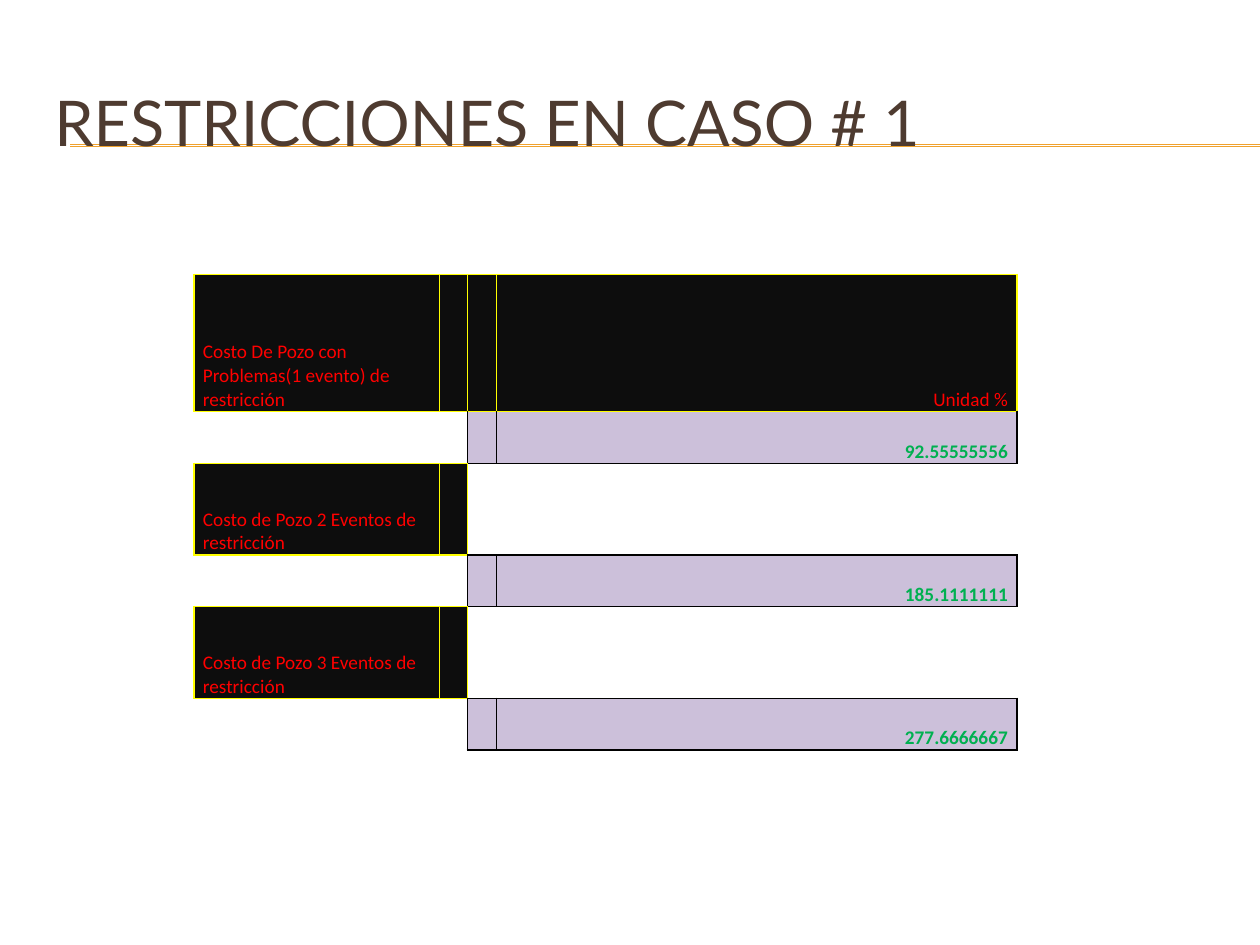
from dataclasses import dataclass

from lxml import etree
from pptx import Presentation
from pptx.dml.color import RGBColor
from pptx.enum.shapes import MSO_CONNECTOR
from pptx.enum.text import MSO_ANCHOR, MSO_AUTO_SIZE, PP_ALIGN
from pptx.oxml.ns import qn
from pptx.util import Cm, Pt

STRAIGHT = MSO_CONNECTOR.STRAIGHT
MIDDLE, BOTTOM = MSO_ANCHOR.MIDDLE, MSO_ANCHOR.BOTTOM
LEFT, RIGHT = PP_ALIGN.LEFT, PP_ALIGN.RIGHT
NO_AUTOFIT = MSO_AUTO_SIZE.NONE

COLORS = {
    "title": "4E3B30",
    "rule": "F0A22E",
    "label_fill": "0D0D0D",
    "label_text": "FF0000",
    "label_border": "FFFF00",
    "value_fill": "CCC0DA",
    "value_text": "00B050",
    "value_border": "000000",
}
COLUMN_WIDTHS = (4.95, 0.56, 0.59, 10.49)
HEADER_HEIGHT, LABEL_HEIGHT, VALUE_HEIGHT = 2.77, 1.85, 1.04
# Neighbour offsets (row, column) in the order the cell properties require
SIDES = {"a:lnL": (0, -1), "a:lnR": (0, 1), "a:lnT": (-1, 0), "a:lnB": (1, 0)}


@dataclass(frozen=True)
class CostRow:
    height: float
    kinds: tuple[str, ...]
    first: str = ""
    last: str = ""


def label_row(label: str) -> CostRow:
    return CostRow(LABEL_HEIGHT, ("label", "label", "", ""), first=label)


def value_row(value: str) -> CostRow:
    return CostRow(VALUE_HEIGHT, ("", "", "value", "value"), last=value)


COST_ROWS = (
    CostRow(HEADER_HEIGHT, ("label",) * 4,
            "Costo De Pozo con Problemas(1 evento) de restricción", "Unidad %"),
    value_row("92.55555556"),
    label_row("Costo de Pozo 2 Eventos de restricción"),
    value_row("185.1111111"),
    label_row("Costo de Pozo 3 Eventos de restricción"),
    value_row("277.6666667"),
)


def rgb(name: str) -> RGBColor:
    return RGBColor.from_string(COLORS[name])


def kind_at(row: int, column: int) -> str:
    inside = 0 <= row < len(COST_ROWS) and 0 <= column < len(COLUMN_WIDTHS)
    return COST_ROWS[row].kinds[column] if inside else ""


def add_borders(cell, row: int, column: int) -> None:
    """Colour each edge by the cells that share it; labels win over values."""
    properties = cell._tc.get_or_add_tcPr()
    for tag, (down, across) in SIDES.items():
        sharing = {kind_at(row, column), kind_at(row + down, column + across)}
        edge = etree.SubElement(properties, qn(tag), w=str(Pt(1)))
        owner = next((kind for kind in ("label", "value") if kind in sharing), None)
        if owner:
            fill = etree.SubElement(edge, qn("a:solidFill"))
            etree.SubElement(fill, qn("a:srgbClr"), val=COLORS[f"{owner}_border"])
        else:
            etree.SubElement(edge, qn("a:noFill"))


def format_cell(cell, row: int, column: int) -> None:
    kind = kind_at(row, column)
    add_borders(cell, row, column)
    if kind:
        cell.fill.solid()
        cell.fill.fore_color.rgb = rgb(f"{kind}_fill")
    else:
        cell.fill.background()
    cell.vertical_anchor = BOTTOM
    cell.margin_left = cell.margin_right = Cm(0.18)
    cell.margin_top = cell.margin_bottom = 0
    paragraph = cell.text_frame.paragraphs[0]
    paragraph.alignment = RIGHT if column == len(COLUMN_WIDTHS) - 1 else LEFT
    paragraph.font.size = Pt(11)
    paragraph.font.name = "Calibri"
    paragraph.font.bold = kind == "value"
    if kind:
        paragraph.font.color.rgb = rgb(f"{kind}_text")


def add_cost_table(slide) -> None:
    table = slide.shapes.add_table(
        len(COST_ROWS), len(COLUMN_WIDTHS), Cm(3.91), Cm(5.53),
        Cm(sum(COLUMN_WIDTHS)), Cm(sum(row.height for row in COST_ROWS)),
    ).table
    table.first_row = table.horz_banding = False
    for column, width in zip(table.columns, COLUMN_WIDTHS):
        column.width = Cm(width)
    for row, cost in enumerate(COST_ROWS):
        table.rows[row].height = Cm(cost.height)
        for column, content in enumerate((cost.first, "", "", cost.last)):
            cell = table.cell(row, column)
            cell.text = content
            format_cell(cell, row, column)


def add_title_rule(slide, top: float) -> None:
    """Draw a thin rule behind the title, running to the right slide edge."""
    rule = slide.shapes.add_connector(STRAIGHT, Cm(1.42), Cm(top), Cm(25.4), Cm(top))
    rule.line.color.rgb = rgb("rule")
    rule.line.width = Pt(0.75)
    etree.SubElement(rule._element.spPr, qn("a:effectLst"))
    slide.shapes._spTree.insert(2, rule._element)


def set_title(slide, wording: str) -> None:
    title = slide.shapes.title
    title.left, title.top = Cm(0.84), Cm(1.27)
    title.width, title.height = Cm(24.13), Cm(2.34)
    frame = title.text_frame
    frame.text = wording
    frame.word_wrap = True
    frame.auto_size = NO_AUTOFIT
    frame.vertical_anchor = MIDDLE
    paragraph = frame.paragraphs[0]
    paragraph.alignment = LEFT
    paragraph.font.name = "Lato"
    paragraph.font.size = Pt(36)
    paragraph.font.color.rgb = rgb("title")


def main() -> None:
    presentation = Presentation()
    presentation.slide_width, presentation.slide_height = Cm(25.4), Cm(19.05)
    slide = presentation.slides.add_slide(presentation.slide_layouts[5])
    set_title(slide, "RESTRICCIONES EN CASO # 1")
    for top in (2.92, 2.95):
        add_title_rule(slide, top)
    add_cost_table(slide)
    presentation.save("out.pptx")


if __name__ == "__main__":
    main()
